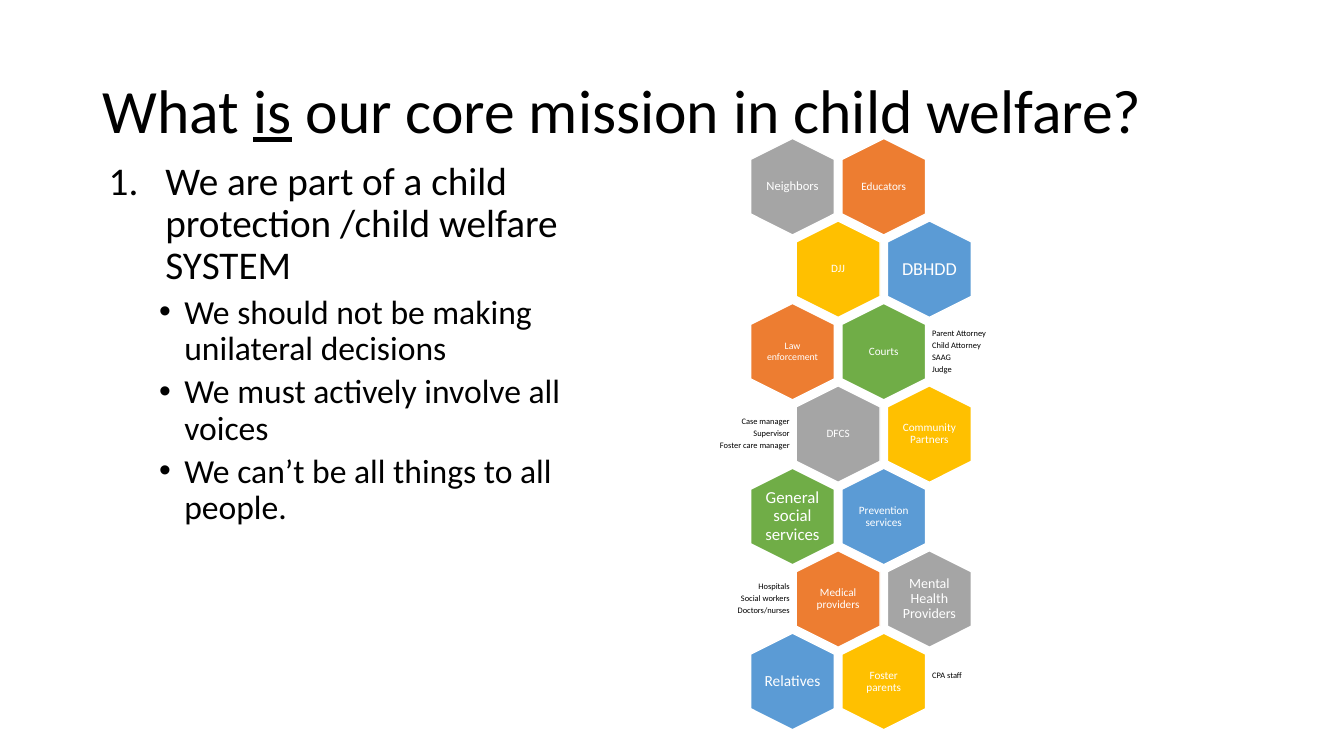
from lxml import etree
from pptx import Presentation
from pptx.dml.color import RGBColor
from pptx.enum.shapes import MSO_SHAPE
from pptx.enum.text import MSO_ANCHOR, PP_ALIGN
from pptx.oxml.ns import qn
from pptx.util import Pt

HEXAGON = MSO_SHAPE.HEXAGON
TOP, MIDDLE = MSO_ANCHOR.TOP, MSO_ANCHOR.MIDDLE
LEFT, CENTER, RIGHT = PP_ALIGN.LEFT, PP_ALIGN.CENTER, PP_ALIGN.RIGHT

BLACK = RGBColor(0x00, 0x00, 0x00)
WHITE = RGBColor(0xFF, 0xFF, 0xFF)
ORANGE = RGBColor(0xED, 0x7D, 0x31)
GRAY = RGBColor(0xA5, 0xA5, 0xA5)
GOLD = RGBColor(0xFF, 0xC0, 0x00)
BLUE = RGBColor(0x5B, 0x9B, 0xD5)
GREEN = RGBColor(0x70, 0xAD, 0x47)

FONT = "Calibri"
HEXAGON_LENGTH, HEXAGON_BREADTH = 68.9, 59.9
COLUMN_PITCH, ROW_PITCH = 65.2, 58.9
LABEL_WIDTH, LABEL_HEIGHT = 41.8, 47.5
NOTE_WIDTH, NOTE_HEIGHT = 77, 41.8

TITLE_RUNS = [("What ", False), ("is", True), (" our core mission in child welfare?", False)]

MISSION = "We are part of a child protection /child welfare SYSTEM"
MISSION_POINTS = [
    "We should not be making unilateral decisions",
    "We must actively involve all voices",
    "We can’t be all things to all people.",
]

# Each row: two hexagons as (label, size, fill)
PARTNER_ROWS = [
    [("Neighbors", 9, GRAY), ("Educators", 8, ORANGE)],
    [("DJJ", 8, GOLD), ("DBHDD", 13, BLUE)],
    [("Law enforcement", 7, ORANGE), ("Courts", 8, GREEN)],
    [("DFCS", 8, GRAY), ("Community Partners", 8, GOLD)],
    [("General social services", 12, GREEN), ("Prevention services", 8, BLUE)],
    [("Medical providers", 8, ORANGE), ("Mental Health Providers", 10, GRAY)],
    [("Relatives", 11, BLUE), ("Foster parents", 8, GOLD)],
]

# Row index: (note lines, upward shift)
PARTNER_NOTES = {
    2: (["Parent Attorney", "Child Attorney", "SAAG", "Judge"], 0),
    3: (["Case manager", "Supervisor", "Foster care manager"], 0),
    5: (["Hospitals", "Social workers", "Doctors/nurses"], 0),
    6: (["CPA staff"], 4.3),
}


def add_text_frame(slide, left, top, width, height, anchor, inset=None):
    box = slide.shapes.add_textbox(Pt(left), Pt(top), Pt(width), Pt(height))
    frame = box.text_frame
    frame.word_wrap = True
    frame.vertical_anchor = anchor
    if inset is not None:
        for side in ("left", "top", "right", "bottom"):
            setattr(frame, f"margin_{side}", Pt(inset))
    return frame


def add_paragraph(frame, position, **formats):
    paragraph = frame.add_paragraph() if position else frame.paragraphs[0]
    for name, value in {"line_spacing": 0.9, **formats}.items():
        setattr(paragraph, name, value)
    return paragraph


def add_run(paragraph, text, size, color, **formats):
    run = paragraph.add_run()
    run.text = text
    run.font.color.rgb = color
    for name, value in {"name": FONT, "size": Pt(size), **formats}.items():
        setattr(run.font, name, value)


def set_bullet(paragraph, margin, hanging, tag, **attributes):
    properties = paragraph._p.get_or_add_pPr()
    properties.set("marL", str(Pt(margin)))
    properties.set("indent", str(-Pt(hanging)))
    etree.SubElement(properties, qn("a:buFont"), typeface="Arial" if tag == "a:buChar" else "+mj-lt")
    etree.SubElement(properties, qn(tag), **attributes)


def add_title(slide, left, top, width, height):
    frame = add_text_frame(slide, left, top, width, height, MIDDLE)
    paragraph = add_paragraph(frame, 0)
    for text, underlined in TITLE_RUNS:
        add_run(paragraph, text, 44, BLACK, underline=underlined)


def add_mission_list(slide, left, top, width, height):
    frame = add_text_frame(slide, left, top, width, height, TOP)
    paragraph = add_paragraph(frame, 0)
    set_bullet(paragraph, 40.5, 40.5, "a:buAutoNum", type="arabicPeriod")
    add_run(paragraph, MISSION, 28, BLACK)
    for position, text in enumerate(MISSION_POINTS, 1):
        paragraph = add_paragraph(frame, position, level=1, space_before=Pt(5))
        set_bullet(paragraph, 54, 18, "a:buChar", char="•")
        add_run(paragraph, text, 24, BLACK)


def add_partner(slide, center_x, center_y, label, size, fill):
    """Add an upright hexagon and its label around one centre."""
    hexagon = slide.shapes.add_shape(
        HEXAGON, Pt(center_x - HEXAGON_LENGTH / 2), Pt(center_y - HEXAGON_BREADTH / 2),
        Pt(HEXAGON_LENGTH), Pt(HEXAGON_BREADTH))
    hexagon.rotation = 90
    hexagon.shadow.inherit = False
    hexagon.fill.solid()
    hexagon.fill.fore_color.rgb = fill
    hexagon.line.color.rgb = WHITE
    hexagon.line.width = Pt(1)
    frame = add_text_frame(slide, center_x - LABEL_WIDTH / 2, center_y - LABEL_HEIGHT / 2,
                           LABEL_WIDTH, LABEL_HEIGHT, MIDDLE, inset=0)
    add_run(add_paragraph(frame, 0, alignment=CENTER), label, size, WHITE)


def add_note(slide, left, center_y, lines, alignment):
    frame = add_text_frame(slide, left, center_y - NOTE_HEIGHT / 2,
                           NOTE_WIDTH, NOTE_HEIGHT, MIDDLE, inset=2)
    for position, line in enumerate(lines):
        paragraph = add_paragraph(frame, position, alignment=alignment, space_after=Pt(2.1))
        add_run(paragraph, line, 6, BLACK)


def add_honeycomb(slide, left, top):
    """Stack the partner rows, every second one shifted by half a column."""
    for row, partners in enumerate(PARTNER_ROWS):
        shifted = row % 2 == 1
        first_x = left + HEXAGON_BREADTH / 2 + shifted * COLUMN_PITCH / 2
        center_y = top + HEXAGON_LENGTH / 2 + row * ROW_PITCH
        for column, partner in enumerate(partners):
            add_partner(slide, first_x + column * COLUMN_PITCH, center_y, *partner)
        if row in PARTNER_NOTES:
            lines, lift = PARTNER_NOTES[row]
            if shifted:
                note_left, alignment = first_x - COLUMN_PITCH / 2 - NOTE_WIDTH, RIGHT
            else:
                note_left, alignment = first_x + COLUMN_PITCH * 1.5, LEFT
            add_note(slide, note_left, center_y - lift, lines, alignment)


def main():
    presentation = Presentation()
    presentation.slide_width, presentation.slide_height = Pt(960), Pt(540)
    slide = presentation.slides.add_slide(presentation.slide_layouts[6])
    add_title(slide, 66.24, 28.8, 828, 104.4)
    add_mission_list(slide, 70.56, 111.6, 368.64, 380.9)
    add_honeycomb(slide, 536.1, 98.9)
    presentation.save("out.pptx")


if __name__ == "__main__":
    main()
